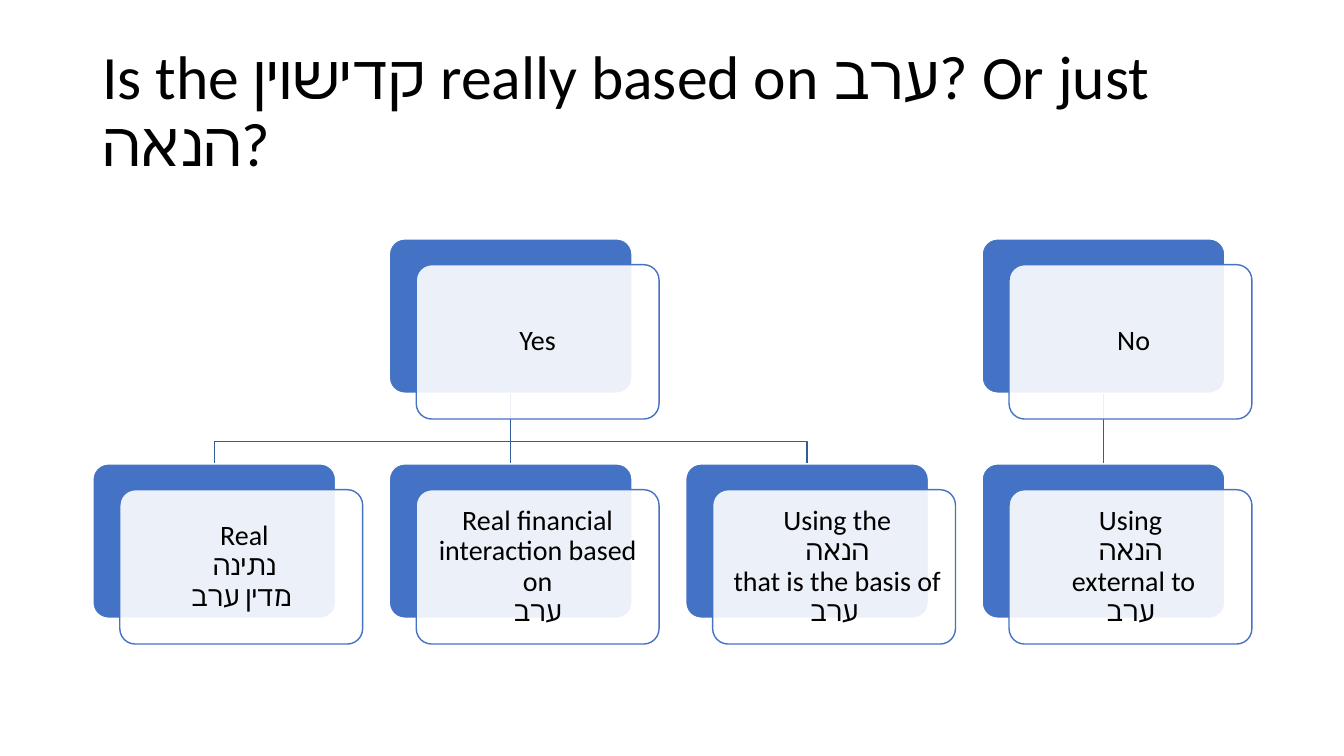
import pptx
import pptx.util
import pptx.dml.color
import pptx.enum.shapes
import pptx.enum.text
import pptx.oxml.ns
import lxml.etree

Cm = pptx.util.Cm
Pt = pptx.util.Pt
ALIGN = pptx.enum.text.PP_ALIGN
ANCHOR = pptx.enum.text.MSO_ANCHOR
qn = pptx.oxml.ns.qn

COLOURS = {"card": "4472C4", "panel": "FFFFFF", "branch": "365B9D", "text": "000000"}
LEFT, COLUMN_STEP = 2.34, 7.47
ROW_TOPS = (6.02, 11.69)
CARD_WIDTH, CARD_HEIGHT = 6.12, 3.89
SHIFT_X, SHIFT_Y = 0.68, 0.65
BEND_GAP = 0.56


def colour(key):
    return pptx.dml.color.RGBColor.from_string(COLOURS[key])


def apply(target, values):
    for attribute, value in values.items():
        setattr(target, attribute, value)


class DecisionSlide:
    paragraph_format = {"line_spacing": 0.9, "space_before": Pt(0)}
    card_margins = dict.fromkeys(
        ("margin_left", "margin_top", "margin_right", "margin_bottom"), Cm(0.2))

    def __init__(self, presentation):
        self.slide = presentation.slides.add_slide(presentation.slide_layouts[5])
        self.shapes = self.slide.shapes

    def wording(self, frame, words, size, alignment):
        apply(frame, {"word_wrap": True, "vertical_anchor": ANCHOR.MIDDLE,
                      "auto_size": pptx.enum.text.MSO_AUTO_SIZE.NONE})
        paragraph = frame.paragraphs[0]
        paragraph.text = words
        apply(paragraph, {**self.paragraph_format, "alignment": alignment})
        for run in paragraph.runs:
            apply(run.font, {"name": "Calibri", "size": Pt(size), "bold": False})
            run.font.color.rgb = colour("text")
            lxml.etree.SubElement(run.font._element, qn("a:cs"), typeface="Calibri")
        return paragraph

    def title(self, words):
        heading = self.shapes.title
        apply(heading, {"left": Cm(2.33), "top": Cm(1.01),
                        "width": Cm(29.21), "height": Cm(3.68)})
        self.wording(heading.text_frame, words, 44, ALIGN.LEFT)

    def rounded(self, left, top, fill, line):
        box = self.shapes.add_shape(
            pptx.enum.shapes.MSO_SHAPE.ROUNDED_RECTANGLE,
            Cm(left), Cm(top), Cm(CARD_WIDTH), Cm(CARD_HEIGHT))
        box.adjustments[0] = 0.1
        box.shadow.inherit = False
        box.fill.solid()
        box.fill.fore_color.rgb = colour(fill)
        box.line.color.rgb = colour(line)
        box.line.width = Pt(1)
        return box

    def card(self, column, row, words):
        left, top = LEFT + column * COLUMN_STEP, ROW_TOPS[row]
        base = self.rounded(left, top, "card", "panel")
        panel = self.rounded(left + SHIFT_X, top + SHIFT_Y, "panel", "card")
        tint = panel._element.spPr.find(qn("a:solidFill"))[0]
        lxml.etree.SubElement(tint, qn("a:alpha"), val="90000")
        apply(panel.text_frame, self.card_margins)
        answer = self.wording(panel.text_frame, words, 20, ALIGN.CENTER)
        answer.space_after = Pt(7)
        answer._p.get_or_add_pPr().set("rtl", "1")
        return base

    def branch(self, parent, child):
        start = parent.left + parent.width // 2
        end = child.left + child.width // 2
        if start == end:
            link = self.shapes.add_connector(
                pptx.enum.shapes.MSO_CONNECTOR.STRAIGHT,
                start, parent.top + parent.height, end, child.top)
            link.begin_connect(parent, 2)
            link.end_connect(child, 0)
            lxml.etree.SubElement(link._element.spPr, qn("a:effectLst"))
        else:
            bend = child.top - Cm(BEND_GAP)
            outline = self.shapes.build_freeform(start, parent.top + parent.height)
            outline.add_line_segments(
                [(start, bend), (end, bend), (end, child.top)], close=False)
            link = outline.convert_to_shape()
            link.fill.background()
            link.shadow.inherit = False
        link.line.color.rgb = colour("branch")
        link.line.width = Pt(1)
        parent._element.addprevious(link._element)


def main():
    presentation = pptx.Presentation()
    apply(presentation, {"slide_width": Cm(33.87), "slide_height": Cm(19.05)})
    decision = DecisionSlide(presentation)
    decision.title("Is the קדישוין really based on ערב? Or just הנאה?")
    answers = (
        (1, "Yes", (
            (0, "Real \nנתינה \nמדין ערב"),
            (1, "Real financial interaction based on\nערב"),
            (2, "Using the \nהנאה \nthat is the basis of \nערב"))),
        (3, "No ", ((3, "Using\nהנאה\nexternal to \nערב"),)),
    )
    for column, answer, reasons in answers:
        parent = decision.card(column, 0, answer)
        for reason_column, reason in reasons:
            decision.branch(parent, decision.card(reason_column, 1, reason))
    presentation.save("out.pptx")


if __name__ == "__main__":
    main()
